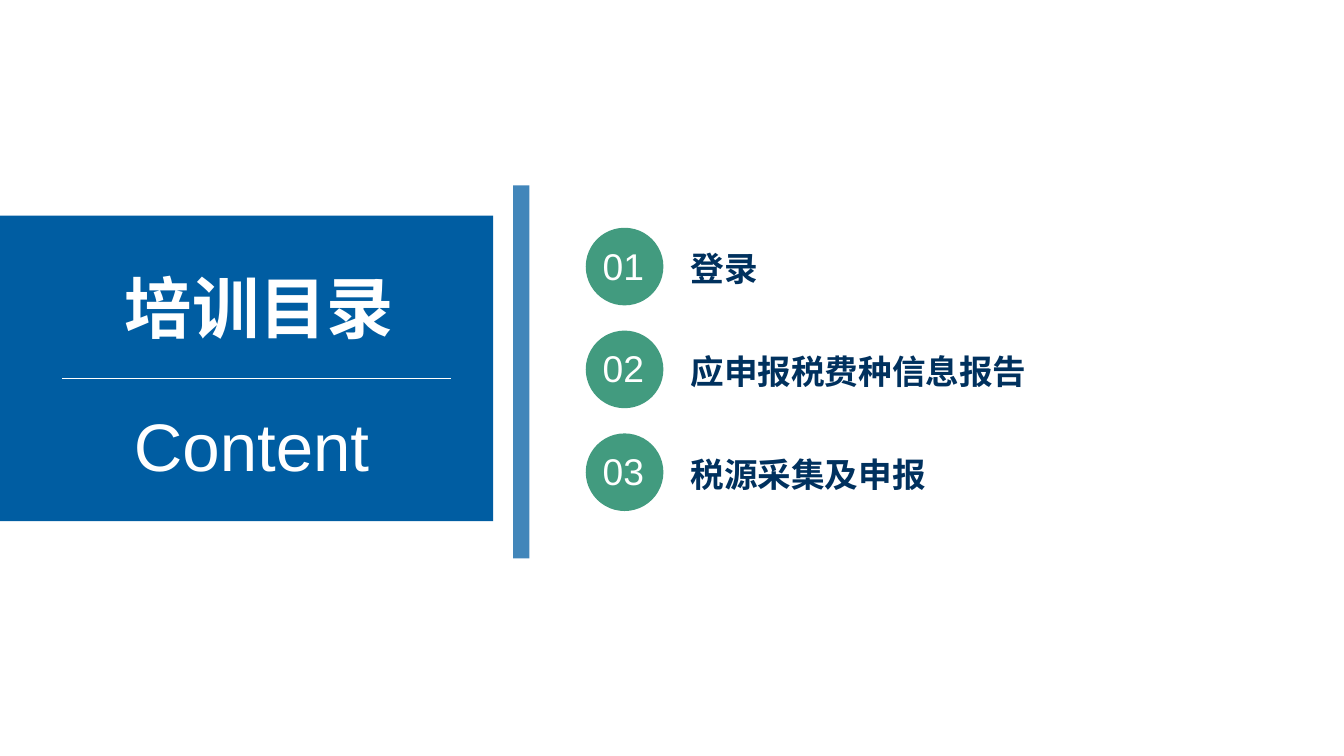
from lxml import etree
from pptx import Presentation
from pptx.dml.color import RGBColor
from pptx.enum import shapes, text
from pptx.oxml import ns
from pptx.util import Inches, Pt

BLUE, NAVY, GREEN, WHITE = "005DA2", "00315E", "429B7F", "FFFFFF"
TOPICS = ["登录", "应申报税费种信息报告", "税源采集及申报"]
FIRST_ROW, ROW_STEP = 2.26, 1.02
CIRCLE_LEFT, CIRCLE_SIZE = 5.81, 0.77

presentation = Presentation()
presentation.slide_width, presentation.slide_height = Inches(13.33), Inches(7.5)
slide = presentation.slides.add_slide(presentation.slide_layouts[6])


def add_block(kind, left, top, width, height, color, opacity=100):
    """Add a preset shape without outline; opacity is in percent."""
    shape = slide.shapes.add_shape(kind, *map(Inches, (left, top, width, height)))
    shape.shadow.inherit = False
    shape.line.fill.background()
    shape.fill.solid()
    shape.fill.fore_color.rgb = RGBColor.from_string(color)
    if opacity < 100:
        color_element = shape.fill._xPr.find(ns.qn("a:solidFill"))[0]
        alpha = etree.SubElement(color_element, ns.qn("a:alpha"))
        alpha.set("val", str(opacity * 1000))


def add_text(content, left, top, width, height, size, color=WHITE, bold=False, wrap=True):
    box = slide.shapes.add_textbox(*map(Inches, (left, top, width, height)))
    frame = box.text_frame
    frame.word_wrap = wrap
    frame.auto_size = text.MSO_AUTO_SIZE.SHAPE_TO_FIT_TEXT
    run = frame.paragraphs[0].add_run()
    run.text = content
    run.font.name = "Arial"
    run.font.size = Pt(size)
    run.font.bold = bold
    run.font.color.rgb = RGBColor.from_string(color)


# Title panel
add_block(shapes.MSO_SHAPE.RECTANGLE, 0, 2.14, 4.89, 3.03, BLUE)
add_text("培训目录", 1.14, 2.59, 2.87, 0.91, 48, bold=True, wrap=False)
divider = slide.shapes.add_connector(
    shapes.MSO_CONNECTOR.STRAIGHT, *map(Inches, (0.62, 3.75, 4.47, 3.75)))
divider.line.color.rgb = RGBColor.from_string(WHITE)
divider.line.width = Pt(0.5)
etree.SubElement(divider._element.spPr, ns.qn("a:effectLst"))
add_text("Content", 1.23, 3.96, 2.56, 0.91, 48, wrap=False)

# Vertical bar
add_block(shapes.MSO_SHAPE.RECTANGLE, 5.09, 1.84, 0.16, 3.7, BLUE, opacity=74)

# Numbered topics
for index, topic in enumerate(TOPICS):
    top = FIRST_ROW + index * ROW_STEP
    add_block(shapes.MSO_SHAPE.OVAL, CIRCLE_LEFT, top, CIRCLE_SIZE, CIRCLE_SIZE, GREEN)
    add_text(f"{index + 1:02d}", CIRCLE_LEFT + 0.07, top + 0.1, 0.63, 0.55, 26.6)
    add_text(topic, 6.75, top + 0.15, 5.49, 0.5, 24, color=NAVY, bold=True)

presentation.save("out.pptx")
